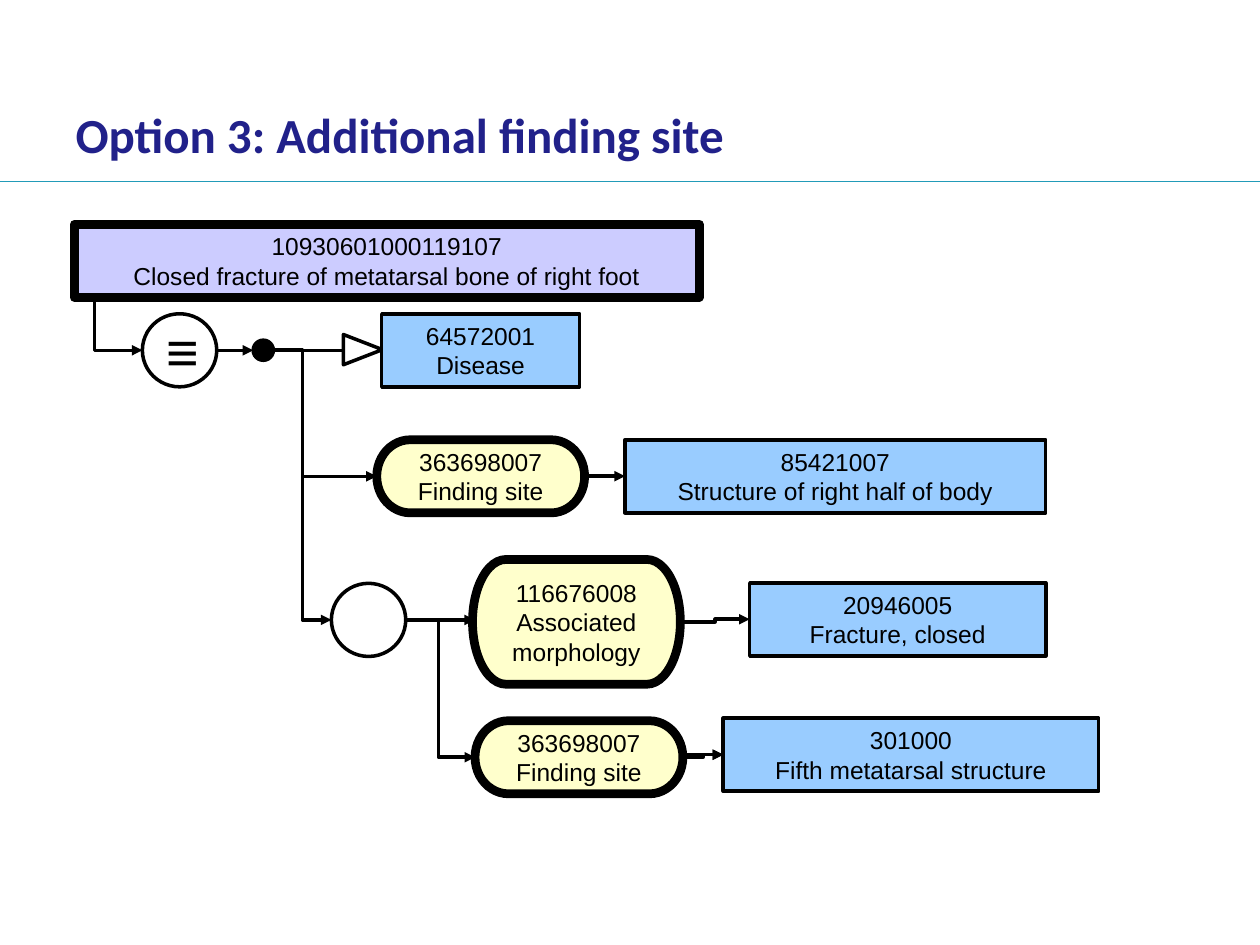
from lxml import etree
from pptx import Presentation
from pptx import util as u
from pptx.dml.color import RGBColor
from pptx.enum import shapes, text
from pptx.oxml import ns

HUES = {"title": "21218A", "rule": "229BB8", "ink": "000000", "paper": "FFFFFF",
        "focus": "CCCCFF", "role": "FFFFCC", "value": "99CCFF"}
KIND = shapes.MSO_SHAPE
WIRE = shapes.MSO_CONNECTOR
HIGH = 0.58
LEFT, RIGHT = 1, 3


def hue(name):
    """Return the named colour."""
    return RGBColor.from_string(HUES[name])


def style(runs, size, font, color, bold=False):
    """Format a list of runs."""
    for run in runs:
        run.font.size = u.Pt(size)
        run.font.name = font
        run.font.bold = bold
        run.font.color.rgb = hue(color)


def node(slide, kind, box, fill=None, words="", line=2, size=14, font="Arial"):
    """Add an outlined shape with centred text."""
    shape = slide.shapes.add_shape(kind, *map(u.Inches, box))
    shape.shadow.inherit = False
    if fill:
        shape.fill.solid()
        shape.fill.fore_color.rgb = hue(fill)
    else:
        shape.fill.background()
    shape.line.color.rgb = hue("ink")
    shape.line.width = u.Pt(line)
    if words:
        frame = shape.text_frame
        frame.text = words
        frame.word_wrap = True
        frame.vertical_anchor = text.MSO_ANCHOR.MIDDLE
        for par in frame.paragraphs:
            par.alignment = text.PP_ALIGN.CENTER
            style(par.runs, size, font, "ink")
    return shape


def wire(slide, start, end, kind=WIRE.STRAIGHT, color="ink", width=2, arrow=True):
    """Add a connector, with an arrowhead unless told otherwise."""
    link = slide.shapes.add_connector(kind, *map(u.Inches, start + end))
    link.line.color.rgb = hue(color)
    link.line.width = u.Pt(width)
    if arrow:
        tail = etree.SubElement(link.line._get_or_add_ln(), ns.qn("a:tailEnd"))
        tail.set("type", "triangle")
    etree.SubElement(link._element.spPr, ns.qn("a:effectLst"))
    return link


def drop(slide, start, end):
    """Add a one-bend arrow that runs down and then right."""
    link = wire(slide, start, end, WIRE.ELBOW)
    wide, tall = end[0] - start[0], end[1] - start[1]
    link.left = u.Inches(start[0] + (wide - tall) / 2)
    link.top = u.Inches(start[1] + (tall - wide) / 2)
    link.width, link.height = u.Inches(tall), u.Inches(wide)
    props = link._element.spPr
    props.find(ns.qn("a:prstGeom")).set("prst", "bentConnector2")
    frame = props.find(ns.qn("a:xfrm"))
    frame.set("rot", "16200000")
    frame.set("flipH", "1")


def header(slide, box):
    """Place the title and the rule below it."""
    left, top, wide, high = box
    title = slide.shapes.title
    title.left, title.top, title.width, title.height = map(u.Inches, box)
    frame = title.text_frame
    frame.text = "Option 3: Additional finding site"
    frame.vertical_anchor = text.MSO_ANCHOR.MIDDLE
    frame.margin_left = frame.margin_right = u.Inches(0.1)
    frame.margin_top = frame.margin_bottom = u.Inches(0.1)
    frame.paragraphs[0].alignment = text.PP_ALIGN.LEFT
    style(frame.paragraphs[0].runs, 28, "Calibri", "title", True)
    rule = top + high + 0.1
    wire(slide, (0, rule), (10, rule), color="rule", width=0.75, arrow=False)


def focus(slide, box):
    """Place the defined concept, its equivalence sign and its parent."""
    left, top, wide, high = box
    row = top + 0.71
    mid = row + HIGH / 2
    node(slide, KIND.RECTANGLE, box, "focus",
         "10930601000119107\nClosed fracture of metatarsal bone of right foot", 5)
    drop(slide, (left + 0.16, top + 0.55), (left + 0.54, mid))
    node(slide, KIND.OVAL, (left + 0.54, row, 0.59, HIGH), "paper", "≡",
         size=32, font="Courier New")
    wire(slide, (left + 1.13, mid), (left + 1.42, mid))
    node(slide, KIND.OVAL, (left + 1.42, mid - 0.08, 0.16, 0.16), "ink")
    wire(slide, (left + 1.58, mid), (left + 2.13, mid), arrow=False)
    tip = node(slide, KIND.ISOSCELES_TRIANGLE, (left + 2.17, mid - 0.16, 0.24, 0.31))
    tip.rotation = 90
    node(slide, KIND.RECTANGLE, (left + 2.44, row, 1.57, HIGH), "value",
         "64572001\nDisease")


def pair(slide, box, role, value, gap, wide, lift=0):
    """Place an attribute and join it to its value on the right."""
    left, top, span, high = box
    first = node(slide, KIND.FLOWCHART_TERMINATOR, box, "role", role, 5)
    start = left + span + gap
    row = top + (high - HIGH) / 2 - lift
    last = node(slide, KIND.RECTANGLE, (start, row, wide, HIGH), "value", value)
    mid = row + HIGH / 2
    link = wire(slide, (left + span, mid), (start, mid), WIRE.ELBOW)
    link.begin_connect(first, RIGHT)
    link.end_connect(last, LEFT)


def group(slide, box):
    """Place the role group with its two attributes."""
    left, top, wide, high = box
    mid = top + HIGH / 2
    site = "363698007\nFinding site"
    node(slide, KIND.OVAL, (left, top, 0.59, HIGH), "paper")
    pair(slide, (left + 1.12, top - 0.19, 1.65, 0.99),
         "116676008\nAssociated morphology", "20946005\nFracture, closed",
         0.55, 2.35, 0.02)
    pair(slide, (left + 1.14, top + high - HIGH, 1.65, HIGH), site,
         "301000\nFifth metatarsal structure", 0.32, 2.98, 0.02)
    wire(slide, (left + 0.59, mid), (left + 1.14, mid))
    drop(slide, (left + 0.85, mid + 0.01), (left + 1.14, top + high - HIGH / 2))
    low = top + high - HIGH / 2 - 0.02
    wire(slide, (left + 2.79, low), (left + 3.11, low))


def main():
    """Build and save the slide."""
    deck = Presentation()
    deck.slide_width, deck.slide_height = u.Inches(10), u.Inches(7.5)
    slide = deck.slides.add_slide(deck.slide_layouts[5])
    header(slide, (0.5, 0.78, 7.21, 0.56))
    focus(slide, (0.59, 1.78, 4.96, HIGH))
    pair(slide, (2.99, 3.49, 1.65, HIGH), "363698007\nFinding site",
         "85421007\nStructure of right half of body", 0.32, 3.34)
    group(slide, (2.63, 4.63, 6.09, 1.67))
    drop(slide, (2.4, 2.8), (2.99, 3.78))
    wire(slide, (2.17, 2.78), (2.63, 4.92), WIRE.ELBOW)
    deck.save("out.pptx")


if __name__ == "__main__":
    main()
